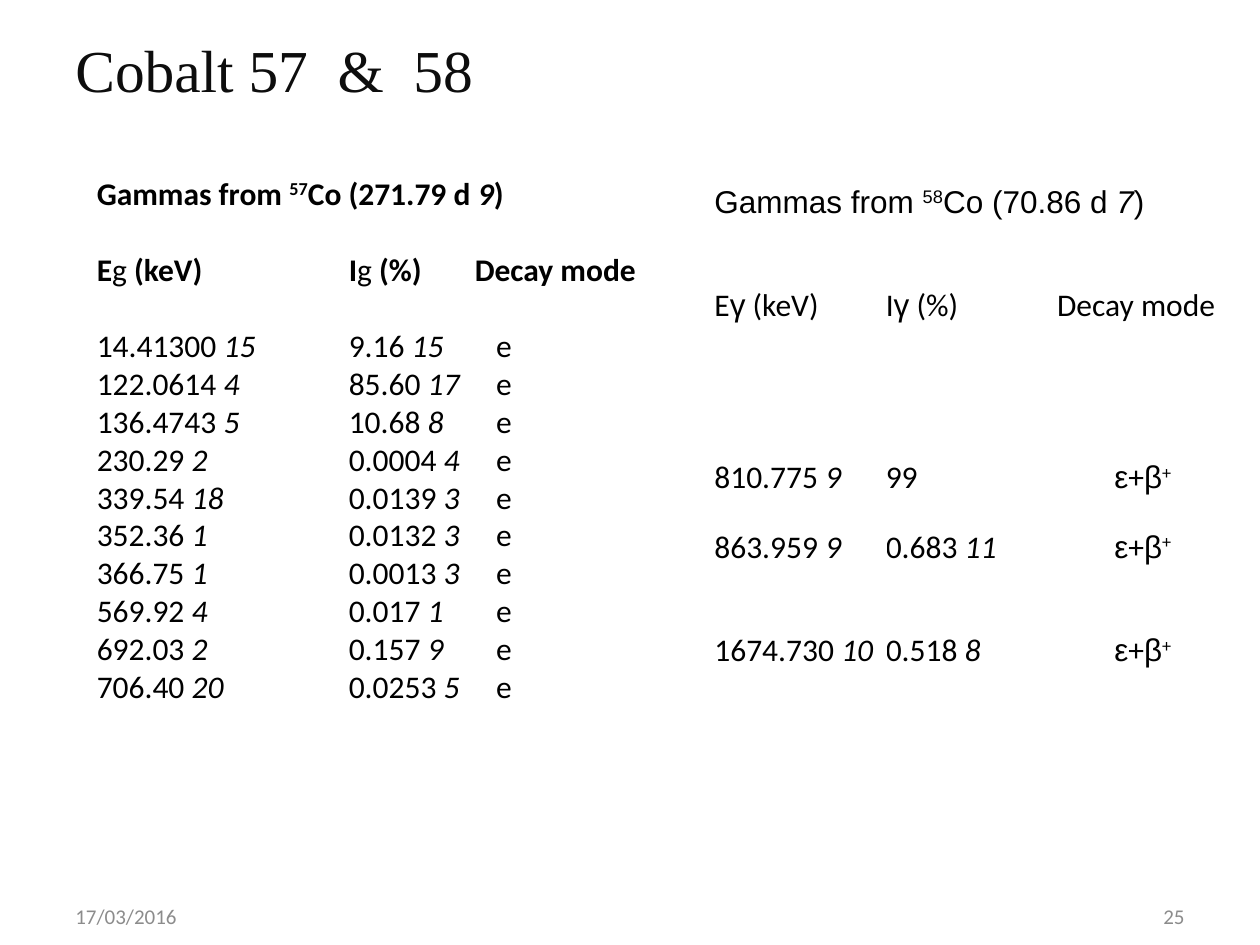
from pptx import Presentation
from pptx.dml.color import RGBColor
from pptx.enum.text import MSO_ANCHOR, PP_ALIGN
from pptx.oxml.xmlchemy import OxmlElement
from pptx.util import Inches, Pt

LEFT, CENTER, RIGHT = PP_ALIGN.LEFT, PP_ALIGN.CENTER, PP_ALIGN.RIGHT
TOP, MIDDLE = MSO_ANCHOR.TOP, MSO_ANCHOR.MIDDLE

THEME = {
    "title": {"font": "Times New Roman", "size": 34, "color": "0D0D0D"},
    "body": {"font": "Calibri", "size": 18, "color": "000000"},
    "heading": {"font": "Arial", "size": 18, "color": "000000"},
    "footer": {"font": "Calibri", "size": 12, "color": "8C8C8C"},
    "symbol_font": "Arial",
    "cell_fill": "FFFFFF",
    "line_gap": 22,
}

# A piece of text is (text, marks): b bold, i italic, ^ superscript, s symbol font
TITLE = "Cobalt 57  &  58"
DATE, PAGE = "17/03/2016", "25"

CO57_HEADING = [("Gammas from ", "b"), ("57", "b^"), ("Co (271.79 d ", "b"),
                ("9", "bi"), (")", "b")]
CO57_HEADER = [("E", "b"), ("g", ""), (" (keV)\tI", "b"), ("g", ""),
               (" (%)\tDecay mode", "b")]
CO57_GAMMAS = [  # energy, its uncertainty, intensity, its uncertainty
    ("14.41300", "15", "9.16", "15"),
    ("122.0614", "4", "85.60", "17"),
    ("136.4743", "5", "10.68", "8"),
    ("230.29", "2", "0.0004", "4"),
    ("339.54", "18", "0.0139", "3"),
    ("352.36", "1", "0.0132", "3"),
    ("366.75", "1", "0.0013", "3"),
    ("569.92", "4", "0.017", "1"),
    ("692.03", "2", "0.157", "9"),
    ("706.40", "20", "0.0253", "5"),
]
CO57_DECAY = "e"
HEADER_TABS = (2, 3)
GAMMA_TABS = (2, 3.17)

CO58_HEADING = [("Gammas from ", ""), ("58", "^"), ("Co (70.86 d ", ""),
                ("7", "i"), (")", "")]
CO58_HEADER = [[("E", ""), ("γ", "s"), (" (keV)", "")],
               [("I", ""), ("γ", "s"), (" (%)", "")],
               [("Decay mode", "")]]
CO58_GAMMAS = [
    ("810.775", "9", "99", ""),
    ("863.959", "9", "0.683", "11"),
    ("1674.730", "10", "0.518", "8"),
]
CO58_DECAY = [("ε", "s"), ("+", ""), ("β", "s"), ("+", "^")]
CO58_ROW_HEIGHTS = (0.55, 1.09, 0.55, 0.55, 0.55, 1.09)
CO58_COLUMN_WIDTH = 1.36
CO58_FIRST_GAMMA_ROW = 3


def measured(value, uncertainty):
    return [(value + " ", ""), (uncertainty, "i")] if uncertainty else [(value, "")]


def write(paragraph, pieces, style, align=LEFT, tabs=(), space_after=0):
    """Fill a paragraph with marked pieces; tab stops are in inches."""
    paragraph.alignment = align
    paragraph.space_after = Pt(space_after)
    if tabs:
        tab_list = OxmlElement("a:tabLst")
        for position in tabs:
            tab = OxmlElement("a:tab")
            tab.set("pos", str(Inches(position)))
            tab.set("algn", "l")
            tab_list.append(tab)
        paragraph._p.get_or_add_pPr().append(tab_list)
    paragraph.font.name = style["font"]
    paragraph.font.size = Pt(style["size"])
    paragraph.font.color.rgb = RGBColor.from_string(style["color"])
    for text, marks in pieces:
        run = paragraph.add_run()
        run.text = text
        if "b" in marks:
            run.font.bold = True
        if "i" in marks:
            run.font.italic = True
        if "s" in marks:
            run.font.name = THEME["symbol_font"]
        if "^" in marks:
            run._r.get_or_add_rPr().set("baseline", "30000")


def add_frame(slide, left, top, width, height, anchor=MIDDLE):
    frame = slide.shapes.add_textbox(
        Inches(left), Inches(top), Inches(width), Inches(height)).text_frame
    frame.word_wrap = True
    frame.vertical_anchor = anchor
    return frame


def add_co57_list(slide):
    frame = add_frame(slide, 0.67, 1.33, 5, 4.64, TOP)
    body, gap = THEME["body"], THEME["line_gap"]
    write(frame.paragraphs[0], CO57_HEADING, body, space_after=gap)
    write(frame.add_paragraph(), CO57_HEADER, body, tabs=HEADER_TABS, space_after=gap)
    for energy, energy_error, intensity, intensity_error in CO57_GAMMAS:
        pieces = (measured(energy, energy_error) + [("\t", "")]
                  + measured(intensity, intensity_error) + [("\t" + CO57_DECAY, "")])
        write(frame.add_paragraph(), pieces, body, tabs=GAMMA_TABS)


def add_co58_table(slide):
    columns = len(CO58_HEADER)
    table = slide.shapes.add_table(
        len(CO58_ROW_HEIGHTS), columns, Inches(5.67), Inches(1.33),
        Inches(CO58_COLUMN_WIDTH * columns), Inches(sum(CO58_ROW_HEIGHTS))).table
    table.first_row = table.horz_banding = False
    for column in table.columns:
        column.width = Inches(CO58_COLUMN_WIDTH)
    for row, height in zip(table.rows, CO58_ROW_HEIGHTS):
        row.height = Inches(height)
    for cell in table.iter_cells():
        cell.fill.solid()
        cell.fill.fore_color.rgb = RGBColor.from_string(THEME["cell_fill"])
        cell.vertical_anchor = MIDDLE
        cell.margin_left = cell.margin_right = cell.margin_top = cell.margin_bottom = 0
    for full_width_row in (0, 2):
        table.cell(full_width_row, 0).merge(table.cell(full_width_row, columns - 1))

    def fill(row, column, pieces, style=THEME["body"], align=LEFT):
        write(table.cell(row, column).text_frame.paragraphs[0], pieces, style, align)

    fill(0, 0, CO58_HEADING, THEME["heading"])
    for column, pieces in enumerate(CO58_HEADER):
        fill(1, column, pieces)
    for row, gamma in enumerate(CO58_GAMMAS, CO58_FIRST_GAMMA_ROW):
        fill(row, 0, measured(*gamma[:2]))
        fill(row, 1, measured(*gamma[2:]))
        fill(row, 2, CO58_DECAY, align=CENTER)


def main():
    deck = Presentation()
    deck.slide_width, deck.slide_height = Inches(10), Inches(7.5)
    slide = deck.slides.add_slide(deck.slide_layouts[6])
    for text, style, box, align in (
        (TITLE, "title", (0.5, 0.13, 8.08, 0.83), LEFT),
        (DATE, "footer", (0.5, 7.1, 2.33, 0.34), LEFT),
        (PAGE, "footer", (7.17, 7.1, 2.33, 0.34), RIGHT),
    ):
        write(add_frame(slide, *box).paragraphs[0], [(text, "")], THEME[style], align)
    add_co57_list(slide)
    add_co58_table(slide)
    deck.save("out.pptx")


if __name__ == "__main__":
    main()
